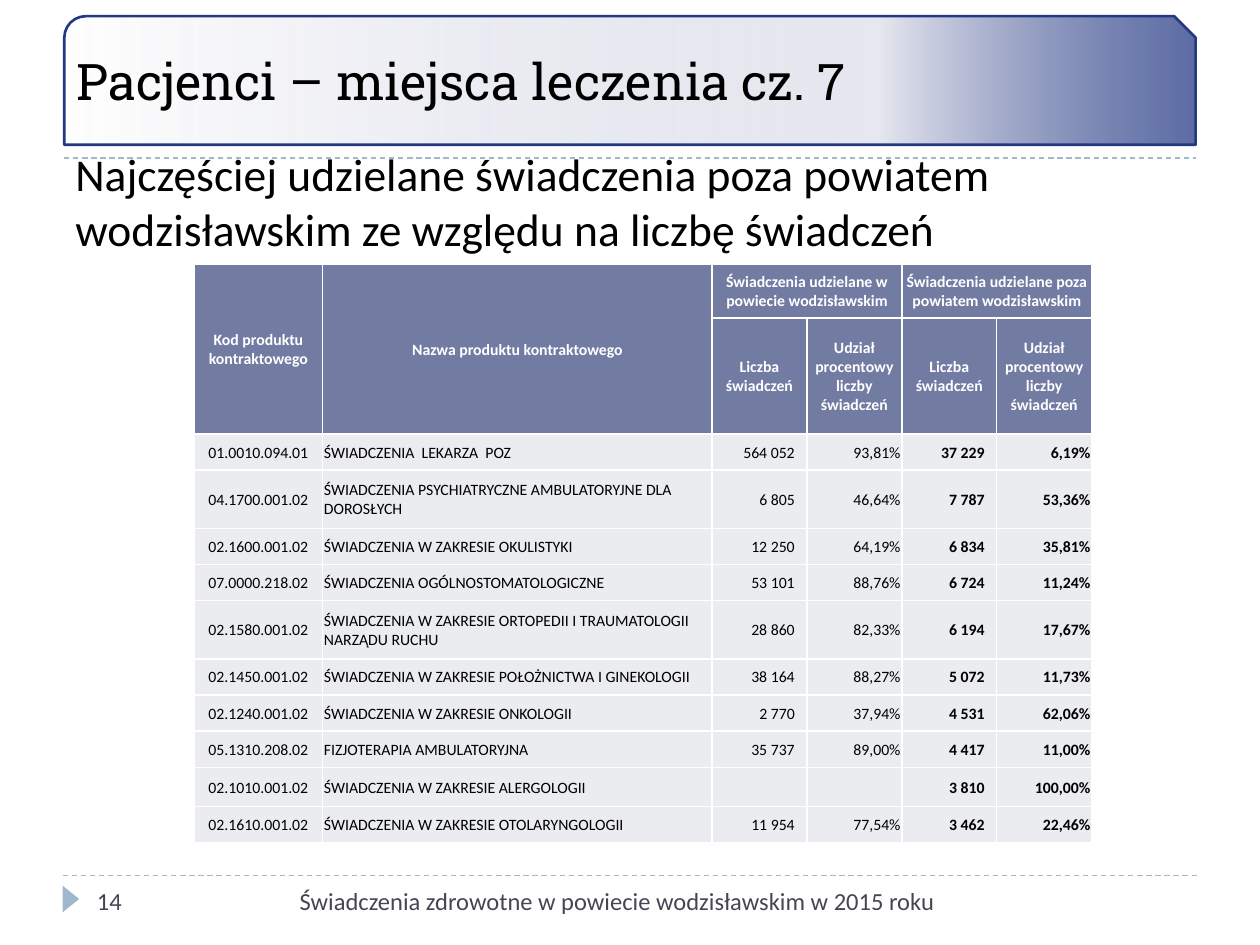
from dataclasses import dataclass

from lxml import etree
from pptx import Presentation
from pptx import util as u
from pptx.dml import color
from pptx.enum import dml, shapes, text
from pptx.oxml import ns


@dataclass(frozen=True)
class Theme:
    navy: str = "233883"
    mist: str = "E6E7EF"
    haze: str = "CCD0E0"
    sky: str = "9FB8CD"
    slate: str = "464653"
    head: str = "727CA3"
    pale: str = "EBECF0"
    white: str = "FFFFFF"
    black: str = "000000"
    serif: str = "Roboto Slab"
    sans: str = "Calibri"
    big: float = 28.8
    lead: float = 26
    foot: float = 14
    small: float = 9


THEME = Theme()
MID = text.MSO_ANCHOR.MIDDLE
LEFT, MIDDLE, RIGHT = text.PP_ALIGN.LEFT, text.PP_ALIGN.CENTER, text.PP_ALIGN.RIGHT

COLS = [73.5, 222.5] + [54.25] * 4
ALIGNS = [MIDDLE, LEFT] + [RIGHT] * 4
COUNTS = (2, 4)
GROUPS = ["Świadczenia udzielane w powiecie wodzisławskim",
          "Świadczenia udzielane poza powiatem wodzisławskim"]
PAIR = ["Liczba świadczeń", "Udział procentowy liczby świadczeń"]
HEADS = [
    ["Kod produktu kontraktowego", "Nazwa produktu kontraktowego",
     GROUPS[0], "", GROUPS[1], ""],
    ["", ""] + PAIR * 2,
]
ROWS = [
    ["01.0010.094.01", "ŚWIADCZENIA  LEKARZA  POZ", "564 052", "93,81%", "37 229", "6,19%"],
    ["04.1700.001.02", "ŚWIADCZENIA PSYCHIATRYCZNE AMBULATORYJNE DLA DOROSŁYCH",
     "6 805", "46,64%", "7 787", "53,36%"],
    ["02.1600.001.02", "ŚWIADCZENIA W ZAKRESIE OKULISTYKI", "12 250", "64,19%", "6 834", "35,81%"],
    ["07.0000.218.02", "ŚWIADCZENIA OGÓLNOSTOMATOLOGICZNE", "53 101", "88,76%", "6 724", "11,24%"],
    ["02.1580.001.02", "ŚWIADCZENIA W ZAKRESIE ORTOPEDII I TRAUMATOLOGII NARZĄDU RUCHU",
     "28 860", "82,33%", "6 194", "17,67%"],
    ["02.1450.001.02", "ŚWIADCZENIA W ZAKRESIE POŁOŻNICTWA I GINEKOLOGII",
     "38 164", "88,27%", "5 072", "11,73%"],
    ["02.1240.001.02", "ŚWIADCZENIA W ZAKRESIE ONKOLOGII", "2 770", "37,94%", "4 531", "62,06%"],
    ["05.1310.208.02", "FIZJOTERAPIA AMBULATORYJNA", "35 737", "89,00%", "4 417", "11,00%"],
    ["02.1010.001.02", "ŚWIADCZENIA W ZAKRESIE ALERGOLOGII", "", "", "3 810", "100,00%"],
    ["02.1610.001.02", "ŚWIADCZENIA W ZAKRESIE OTOLARYNGOLOGII", "11 954", "77,54%", "3 462", "22,46%"],
]


def rgb(code):
    return color.RGBColor.from_string(code)


def pts(*vals):
    return [u.Pt(val) for val in vals]


def write(frame, words, size, ink, face=THEME.sans, align=LEFT, bold=False):
    frame.text = words
    frame.word_wrap = True
    para = frame.paragraphs[0]
    para.alignment = align
    for run in para.runs:
        font = run.font
        font.name, font.size, font.bold = face, u.Pt(size), bold
        font.color.rgb = rgb(ink)


def label(slide, box, words, size, ink, align=LEFT):
    area = slide.shapes.add_textbox(*pts(*box))
    write(area.text_frame, words, size, ink, align=align)


def rule(slide, left, top, width):
    line = slide.shapes.add_connector(
        shapes.MSO_CONNECTOR.STRAIGHT, *pts(left, top, left + width, top))
    line.line.color.rgb = rgb(THEME.sky)
    line.line.width = u.Pt(0.75)
    line.line.dash_style = dml.MSO_LINE.DASH
    etree.SubElement(line._element.spPr, ns.qn("a:effectLst"))


def fade(shape, stops):
    shape.fill.gradient()
    shape.fill.gradient_angle = 180
    grad = shape._element.spPr.find(ns.qn("a:gradFill"))
    group = grad.find(ns.qn("a:gsLst"))
    for stop in list(group):
        group.remove(stop)
    for place, code, alpha in stops:
        stop = etree.SubElement(group, ns.qn("a:gs"), pos=str(place * 1000))
        tint = etree.SubElement(stop, ns.qn("a:srgbClr"), val=code)
        etree.SubElement(tint, ns.qn("a:alpha"), val=str(alpha * 1000))


def banner(slide, box, words):
    left, top, width, height = box
    panel = slide.shapes.add_shape(shapes.MSO_SHAPE.SNIP_ROUND_RECTANGLE, *pts(*box))
    panel.shadow.inherit = False
    fade(panel, [(0, THEME.navy, 73), (28, THEME.mist, 100), (100, THEME.haze, 0)])
    panel.line.color.rgb = rgb(THEME.navy)
    panel.line.width = u.Pt(1.5)
    title = slide.shapes.title
    title._element.addprevious(panel._element)
    title.left, title.top, title.width, title.height = pts(*box)
    frame = title.text_frame
    write(frame, words, THEME.big, THEME.black, THEME.serif)
    frame.auto_size = text.MSO_AUTO_SIZE.NONE
    frame.vertical_anchor = MID
    rule(slide, left, top + height + 7.5, width)


def edge(cell):
    props = cell._tc.get_or_add_tcPr()
    for spot, side in enumerate(("lnL", "lnR", "lnT", "lnB")):
        line = etree.Element(ns.qn(f"a:{side}"), w=str(u.Pt(1)))
        fill = etree.SubElement(line, ns.qn("a:solidFill"))
        etree.SubElement(fill, ns.qn("a:srgbClr"), val=THEME.white)
        props.insert(spot, line)


def style(cell, words, fill, ink, align, bold, right=0.75):
    cell.margin_left, cell.margin_top, cell.margin_right, cell.margin_bottom = pts(
        0.75, 0.75, right, 0)
    cell.vertical_anchor = MID
    cell.fill.solid()
    cell.fill.fore_color.rgb = rgb(fill)
    edge(cell)
    write(cell.text_frame, words, THEME.small, ink, align=align, bold=bold)


def grid(slide, left, top):
    tall = [33.2 if len(row[1]) > 50 else 20.7 for row in ROWS]
    highs = [30.6, 66.2] + tall
    table = slide.shapes.add_table(
        len(highs), len(COLS), *pts(left, top, sum(COLS), sum(highs))).table
    table.first_row = table.horz_banding = False
    for col, width in zip(table.columns, COLS):
        col.width = u.Pt(width)
    for row, high in zip(table.rows, highs):
        row.height = u.Pt(high)
    for r, row in enumerate(HEADS):
        for c, words in enumerate(row):
            style(table.cell(r, c), words, THEME.head, THEME.white, MIDDLE, True)
    for r, row in enumerate(ROWS, len(HEADS)):
        for c, words in enumerate(row):
            style(table.cell(r, c), words, THEME.pale, THEME.black, ALIGNS[c],
                  c >= 4, 7 if c in COUNTS else 0.75)
    for c in (0, 1):
        table.cell(0, c).merge(table.cell(1, c))
    for c in COUNTS:
        table.cell(0, c).merge(table.cell(0, c + 1))


def footer(slide, box, page, words):
    left, top, width, height = box
    rule(slide, left, top, width)
    mark = slide.shapes.add_shape(
        shapes.MSO_SHAPE.ISOSCELES_TRIANGLE, *pts(left - 3, top + 8.6, 15.1, 9.4))
    mark.rotation = 90
    mark.shadow.inherit = False
    mark.fill.solid()
    mark.fill.fore_color.rgb = rgb(THEME.sky)
    mark.line.fill.background()
    label(slide, (left + 12.25, top + 2.2, 156, height), page, THEME.foot, THEME.slate)
    label(slide, (left + 120.25, top + 2.2, 385, height), words, THEME.foot, THEME.slate, RIGHT)


def main():
    deck = Presentation()
    deck.slide_width, deck.slide_height = pts(720, 540)
    slide = deck.slides.add_slide(deck.slide_layouts[5])
    banner(slide, (36.75, 9.25, 646.5, 73.5), "Pacjenci – miejsca leczenia cz. 7")
    label(slide, (36, 80, 648, 70),
          "Najczęściej udzielane świadczenia poza powiatem wodzisławskim "
          "ze względu na liczbę świadczeń", THEME.lead, THEME.black)
    grid(slide, 110.9, 151.2)
    footer(slide, (36, 500.4, 648, 28.8), "14",
           "Świadczenia zdrowotne w powiecie wodzisławskim w 2015 roku")
    deck.save("out.pptx")


if __name__ == "__main__":
    main()
